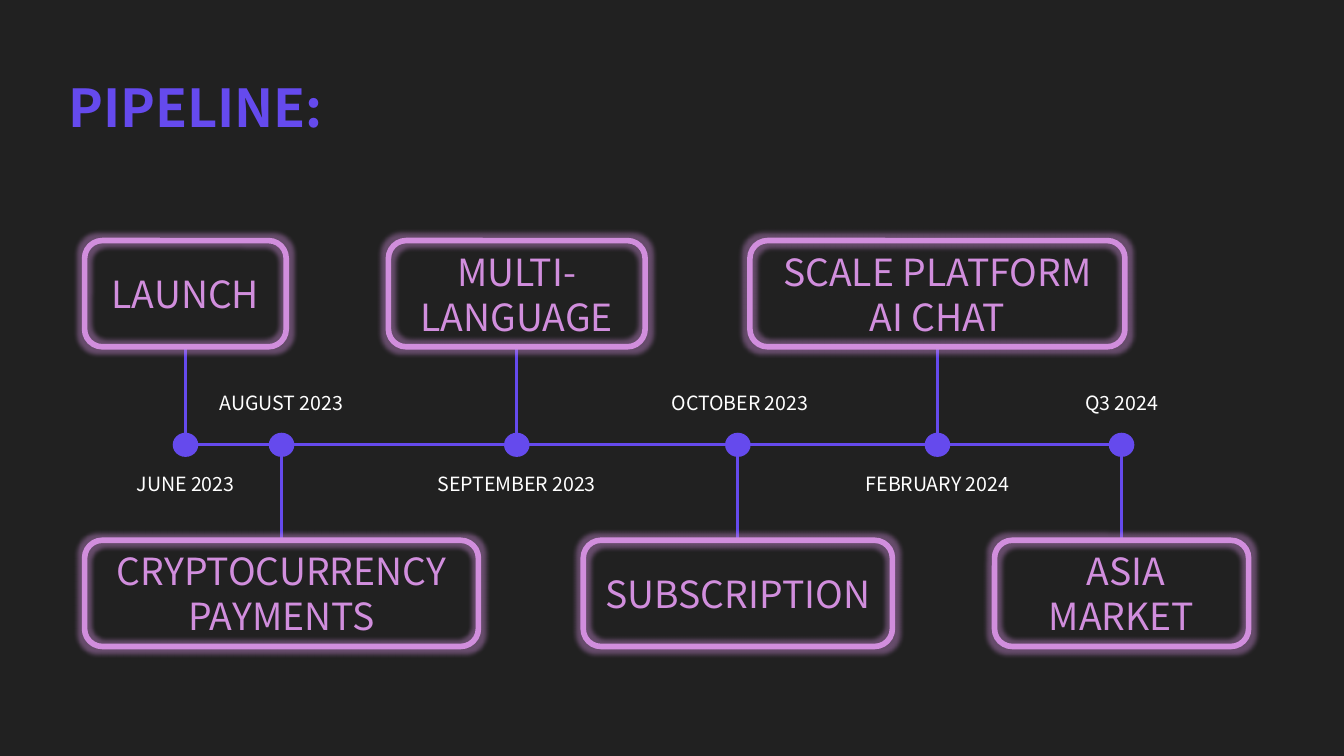
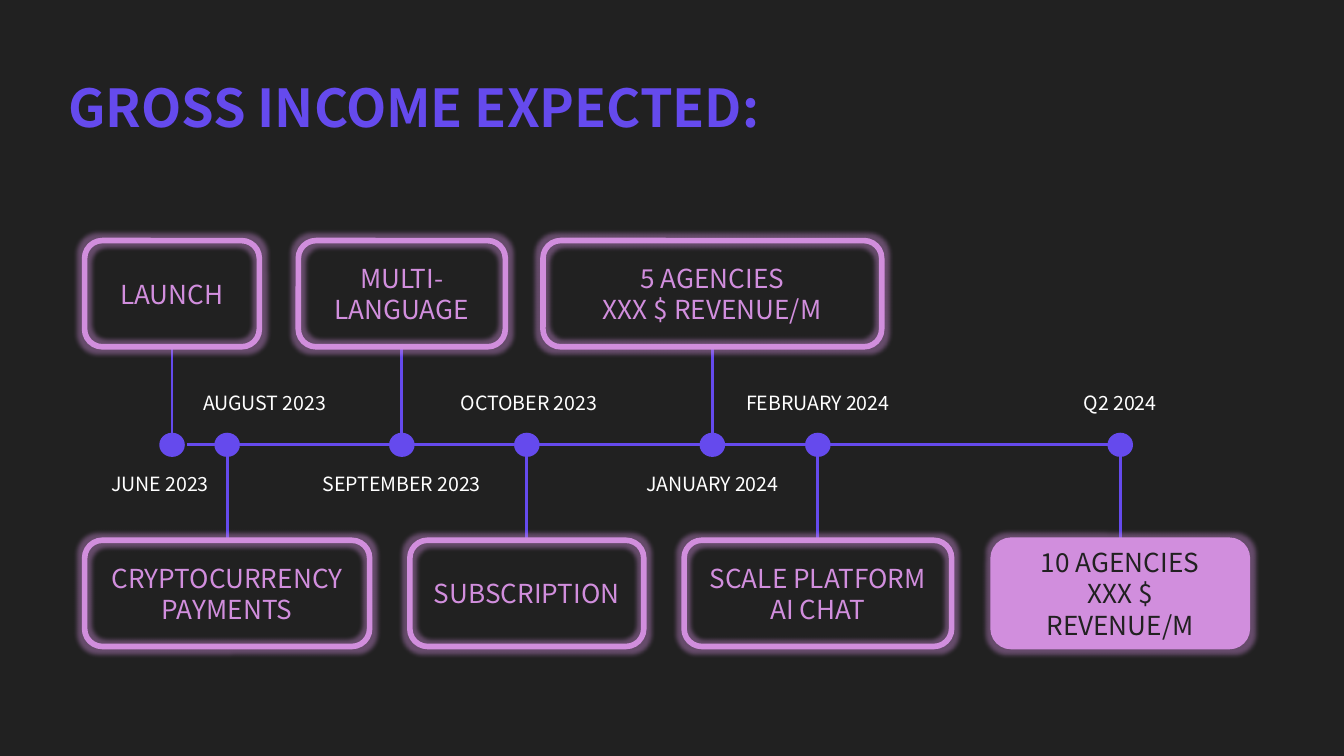
from dataclasses import dataclass

from lxml.etree import SubElement
from pptx import Presentation
from pptx.dml.color import RGBColor
from pptx.enum.shapes import MSO_CONNECTOR as Connector, MSO_SHAPE as Shape
from pptx.enum.text import MSO_ANCHOR as Anchor, PP_ALIGN as Align
from pptx.oxml.ns import qn
from pptx.util import Inches, Pt


@dataclass(frozen=True)
class Theme:
    font: str = "Noto Sans CJK SC"
    night: RGBColor = RGBColor.from_string("212121")
    violet: RGBColor = RGBColor.from_string("654AED")
    pink: RGBColor = RGBColor.from_string("D18EDD")
    white: RGBColor = RGBColor.from_string("FFFFFF")
    title_size: float = 28
    date_size: float = 10.5
    outline: float = 3
    stem: float = 1.5
    glow: float = 5


@dataclass(frozen=True)
class Milestone:
    date: str
    lines: tuple
    left: float
    width: float
    above: bool
    date_shift: float = 0
    filled: bool = False

    @property
    def center(self):
        return self.left + self.width / 2


THEME = Theme()
UP, DOWN = True, False

TIMELINES = [
    {
        "title": "PIPELINE:",
        "label_size": 20,
        "milestones": [
            Milestone("JUNE 2023", ("LAUNCH",), 0.63, 1.5, UP),
            Milestone("AUGUST 2023", ("CRYPTOCURRENCY PAYMENTS",), 0.63, 2.93, DOWN),
            Milestone("SEPTEMBER 2023", ("MULTI-LANGUAGE",), 2.89, 1.91, UP),
            Milestone(" OCTOBER 2023", ("SUBSCRIPTION",), 4.34, 2.3, DOWN),
            Milestone("FEBRUARY 2024", ("SCALE PLATFORM", "AI CHAT"), 5.58, 2.79, UP),
            Milestone("Q3 2024", (" ASIA MARKET",), 7.4, 1.89, DOWN),
        ],
    },
    {
        "title": "GROSS INCOME EXPECTED:",
        "label_size": 14,
        "milestones": [
            Milestone("JUNE 2023", ("LAUNCH",), 0.63, 1.3, UP, date_shift=-0.09),
            Milestone("AUGUST 2023", ("CRYPTOCURRENCY PAYMENTS",), 0.63, 2.12, DOWN,
                      date_shift=0.28),
            Milestone("SEPTEMBER 2023", ("MULTI-LANGUAGE",), 2.22, 1.54, UP),
            Milestone(" OCTOBER 2023", ("SUBSCRIPTION",), 3.05, 1.74, DOWN),
            Milestone("JANUARY 2024", ("5 AGENCIES", "XXX $ REVENUE/M"), 4.04, 2.52, UP),
            Milestone("FEBRUARY 2024", ("SCALE PLATFORM", "AI CHAT"), 5.09, 1.99, DOWN),
            Milestone("Q2 2024", ("10 AGENCIES", "XXX $ REVENUE/M"), 7.39, 1.89, DOWN,
                      filled=True),
        ],
    },
]

SLIDE_WIDTH, SLIDE_HEIGHT = 10, 5.625
TITLE_AREA = (0.41, 0.42, 9.15, 0.74)
AXIS_Y, AXIS_START, AXIS_END = 3.31, 1.39, 8.32
BOX_HEIGHT = 0.79
BOX_TOP = {UP: 1.79, DOWN: 4.02}
DATE_TOP = {UP: 3.42, DOWN: 2.82}
DATE_WIDTH, DATE_HEIGHT = 1.62, 0.38
DOT_WIDTH, DOT_HEIGHT = 0.19, 0.18
INSET = 0.1


def inches(*lengths):
    return [Inches(length) for length in lengths]


def write(frame, lines, size, color, align, anchor, bold=False):
    frame.word_wrap = True
    frame.vertical_anchor = anchor
    frame.margin_left = frame.margin_right = Inches(INSET)
    frame.margin_top = frame.margin_bottom = Inches(INSET)
    for index, line in enumerate(lines):
        para = frame.add_paragraph() if index else frame.paragraphs[0]
        para.alignment = align
        span = para.add_run()
        span.text = line
        span.font.name = THEME.font
        span.font.size = Pt(size)
        span.font.bold = bold
        span.font.color.rgb = color


def add_title(page, text):
    title = page.shapes.title
    title.left, title.top, title.width, title.height = inches(*TITLE_AREA)
    write(title.text_frame, [text], THEME.title_size, THEME.violet,
          Align.LEFT, Anchor.MIDDLE, bold=True)


def add_line(page, start, end):
    line = page.shapes.add_connector(Connector.STRAIGHT, *inches(*start, *end))
    line.line.color.rgb = THEME.violet
    line.line.width = Pt(THEME.stem)
    SubElement(line._element.spPr, qn("a:effectLst"))
    return line


def add_glow(box):
    effects = SubElement(box._element.spPr, qn("a:effectLst"))
    glow = SubElement(effects, qn("a:glow"), rad=str(Pt(THEME.glow)))
    color = SubElement(glow, qn("a:srgbClr"), val=str(THEME.pink))
    SubElement(color, qn("a:alpha"), val="40000")


def add_box(page, milestone, label_size):
    box = page.shapes.add_shape(Shape.ROUNDED_RECTANGLE, *inches(
        milestone.left, BOX_TOP[milestone.above], milestone.width, BOX_HEIGHT))
    box.line.color.rgb = THEME.pink
    box.line.width = Pt(THEME.outline)
    if milestone.filled:
        box.fill.solid()
        box.fill.fore_color.rgb = THEME.pink
    else:
        box.fill.background()
    add_glow(box)
    write(box.text_frame, milestone.lines, label_size,
          THEME.night if milestone.filled else THEME.pink, Align.CENTER, Anchor.MIDDLE)
    return box


def add_milestone(page, milestone, label_size):
    """Draw the stem first, so that the box outline covers its end."""
    axis_point = (milestone.center, AXIS_Y)
    stem = add_line(page, axis_point, axis_point)
    box = add_box(page, milestone, label_size)
    stem.begin_connect(box, 2 if milestone.above else 0)

    date = page.shapes.add_textbox(*inches(
        milestone.center + milestone.date_shift - DATE_WIDTH / 2,
        DATE_TOP[milestone.above], DATE_WIDTH, DATE_HEIGHT))
    write(date.text_frame, [milestone.date], THEME.date_size, THEME.white,
          Align.CENTER, Anchor.TOP)


def add_dot(page, center):
    dot = page.shapes.add_shape(Shape.OVAL, *inches(
        center - DOT_WIDTH / 2, AXIS_Y - DOT_HEIGHT / 2, DOT_WIDTH, DOT_HEIGHT))
    dot.shadow.inherit = False
    dot.fill.solid()
    dot.fill.fore_color.rgb = THEME.violet
    dot.line.fill.background()


def add_timeline(deck, title, label_size, milestones):
    page = deck.slides.add_slide(deck.slide_layouts.get_by_name("Title Only"))
    add_title(page, title)
    add_line(page, (AXIS_START, AXIS_Y), (AXIS_END, AXIS_Y))
    for milestone in milestones:
        add_milestone(page, milestone, label_size)
        add_dot(page, milestone.center)


def main():
    deck = Presentation()
    deck.slide_width, deck.slide_height = inches(SLIDE_WIDTH, SLIDE_HEIGHT)
    background = deck.slide_master.background.fill
    background.solid()
    background.fore_color.rgb = THEME.night
    for timeline in TIMELINES:
        add_timeline(deck, **timeline)
    deck.save("out.pptx")


if __name__ == "__main__":
    main()
